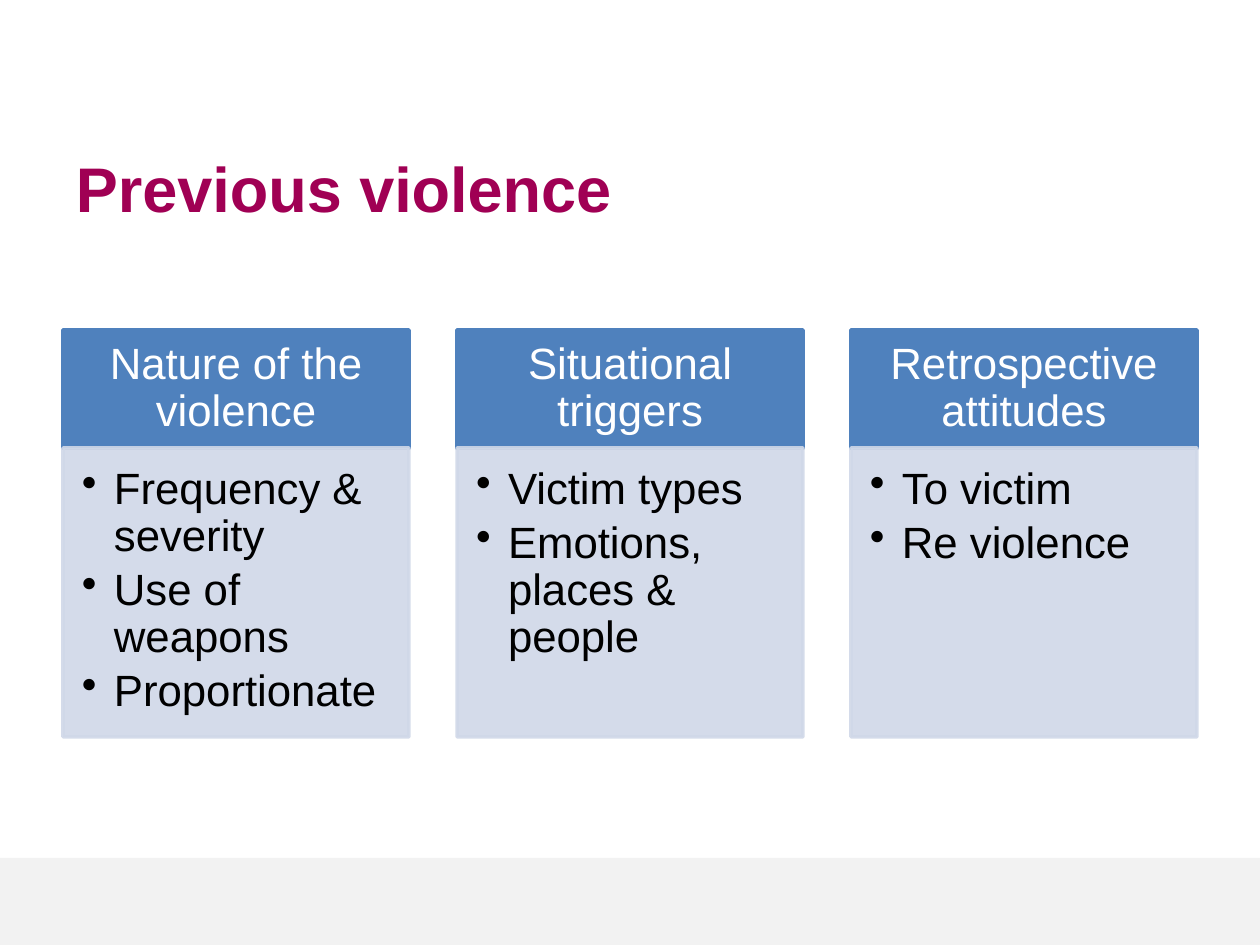
from lxml import etree
from pptx import Presentation
from pptx.dml.color import RGBColor
from pptx.enum.shapes import MSO_SHAPE
from pptx.enum.text import MSO_ANCHOR, PP_ALIGN
from pptx.oxml.ns import qn
from pptx.util import Pt

RECT = MSO_SHAPE.RECTANGLE
TOP, MIDDLE = MSO_ANCHOR.TOP, MSO_ANCHOR.MIDDLE
LEFT, CENTER = PP_ALIGN.LEFT, PP_ALIGN.CENTER
PX = 914400 / 126

THEME = {
    "font": "Arial",
    "title": "A00054", "head": "4F81BD", "body": "D0D8E8",
    "band": "F2F2F2", "light": "FFFFFF", "dark": "000000",
    "title_pt": 36, "text_pt": 25, "line_pt": 2, "alpha": 90,
}

COLUMNS = [
    ("Nature of the violence",
     ["Frequency & severity", "Use of weapons", "Proportionate"]),
    ("Situational triggers", ["Victim types", "Emotions, places & people"]),
    ("Retrospective attitudes", ["To victim", "Re violence"]),
]


def box(left, top, width, height, color, line=True, alpha=100):
    shape = slide.shapes.add_shape(
        RECT, *[round(n * PX) for n in (left, top, width, height)])
    shape.shadow.inherit = False
    fills = [shape.fill]
    if line:
        shape.line.width = Pt(THEME["line_pt"])
        fills.append(shape.line.fill)
    else:
        shape.line.fill.background()
    for fill in fills:
        fill.solid()
        fill.fore_color.rgb = RGBColor.from_string(THEME[color])
    if alpha < 100:
        for tint in shape._element.spPr.iter(qn("a:srgbClr")):
            etree.SubElement(tint, qn("a:alpha"), val=str(alpha * 1000))
    return shape


def write(shape, lines, color, size, insets, anchor, align,
          bold=False, bullet=False, space=1, after=0):
    frame = shape.text_frame
    frame.word_wrap = True
    frame.vertical_anchor = anchor
    (frame.margin_left, frame.margin_top,
     frame.margin_right, frame.margin_bottom) = [round(n * PX) for n in insets]
    for i, line in enumerate(lines):
        para = frame.add_paragraph() if i else frame.paragraphs[0]
        para.alignment = align
        para.line_spacing = space
        para.space_after = Pt(after)
        if bullet:
            props = para._p.get_or_add_pPr()
            indent = round(32 * PX)
            props.set("marL", str(indent))
            props.set("indent", str(-indent))
            etree.SubElement(props, qn("a:buChar"), char="•")
        run = para.add_run()
        run.text = line
        run.font.name = THEME["font"]
        run.font.size = Pt(THEME[size])
        run.font.bold = bold
        run.font.color.rgb = RGBColor.from_string(THEME[color])


deck = Presentation()
deck.slide_width, deck.slide_height = round(1260 * PX), round(945 * PX)
slide = deck.slides.add_slide(deck.slide_layouts[6])

box(0, 858, 1260, 87, "band", line=False)
title = slide.shapes.add_textbox(
    *[round(n * PX) for n in (63, 141, 1071, 93)])
write(title, ["Previous violence"], "title", "title_pt",
      (13, 6, 13, 6), MIDDLE, LEFT, bold=True)

for i, (name, items) in enumerate(COLUMNS):
    left = 63 + i * 394
    head = box(left, 330, 346, 118, "head")
    write(head, [name], "light", "text_pt", (24, 14, 24, 14),
          MIDDLE, CENTER, space=0.9)
    body = box(left, 448, 346, 289, "body", alpha=THEME["alpha"])
    write(body, items, "dark", "text_pt", (19, 19, 24, 28),
          TOP, LEFT, bullet=True, space=0.9, after=3.75)

deck.save("out.pptx")
